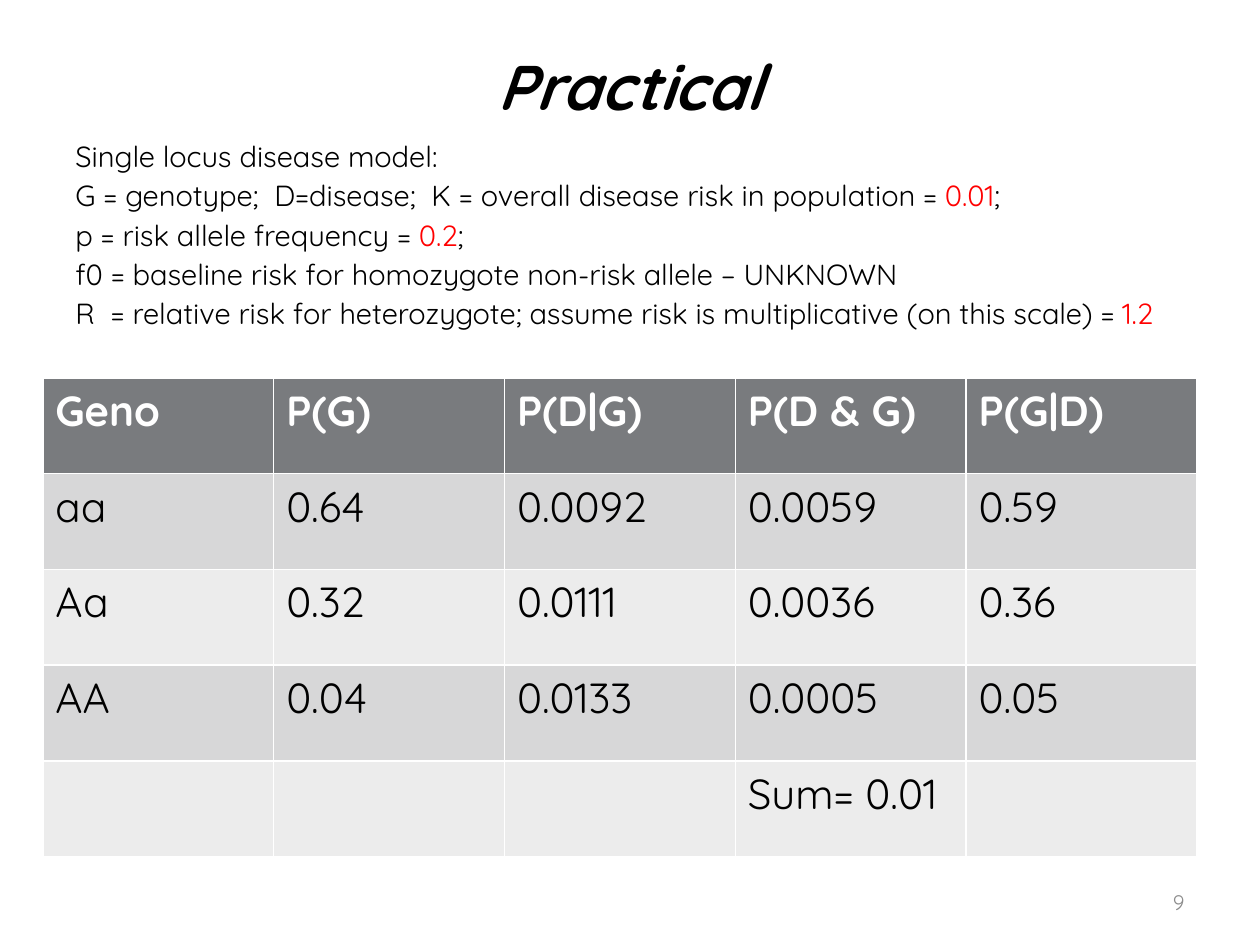
from dataclasses import dataclass
from pptx import Presentation, util as u
from pptx.dml.color import RGBColor
from pptx.enum import text

TITLE = "Practical"
PAGE_NUMBER = "9"
MODEL = [
    ["Single locus disease model:"],
    ["G = genotype;  D=disease;  K = overall disease risk in population = ", "0.01", ";"],
    ["p = risk allele frequency = ", "0.2", ";"],
    ["f0 = baseline risk for homozygote non-risk allele – UNKNOWN"],
    ["R  = relative risk for heterozygote; assume risk is multiplicative (on this scale) = ", "1.2"],
]
GENOTYPES = [
    ["Geno", "P(G)", "P(D|G)", "P(D & G)", "P(G|D)"],
    ["aa", "0.64", "0.0092", "0.0059", "0.59"],
    ["Aa", "0.32", "0.0111", "0.0036", "0.36"],
    ["AA", "0.04", "0.0133", "0.0005", "0.05"],
    ["", "", "", "Sum= 0.01", ""],
]


@dataclass(frozen=True)
class Theme:
    font: str = "Quicksand"
    ink: str = "000000"
    value: str = "FF0000"
    muted: str = "8C8C8C"
    header_ink: str = "FFFFFF"
    header_fill: str = "797B7E"
    bands: tuple = ("D7D7D8", "ECECEC")
    title_size: float = 36
    model_size: float = 16.6
    table_size: float = 24
    number_size: float = 12
    model_gap: float = 2.5


theme = Theme()
WIDTH, HEIGHT = u.Inches(10), u.Inches(7.5)
MARGIN = 0.05


def style(part, size, color, bold=False, italic=False):
    font = part.font
    font.name, font.size = theme.font, u.Pt(size)
    font.bold, font.italic = bold, italic
    font.color.rgb = RGBColor.from_string(color)


def add_text(slide, left, top, width, height, anchor):
    frame = slide.shapes.add_textbox(
        int(left * WIDTH), int(top * HEIGHT), int(width * WIDTH), int(height * HEIGHT)
    ).text_frame
    frame.word_wrap = True
    frame.vertical_anchor = anchor
    return frame


def add_line(slide, words, box, align, size, color, **emphasis):
    line = add_text(slide, *box, text.MSO_ANCHOR.MIDDLE).paragraphs[0]
    line.text, line.alignment = words, align
    style(line, size, color, **emphasis)


def add_model(slide):
    frame = add_text(slide, MARGIN, 0.14, 0.94, 0.26, text.MSO_ANCHOR.TOP)
    for index, pieces in enumerate(MODEL):
        statement = frame.add_paragraph() if index else frame.paragraphs[0]
        if index:
            statement.space_before = u.Pt(theme.model_gap)
        for position, piece in enumerate(pieces):
            run = statement.add_run()
            run.text = piece
            style(run, theme.model_size, theme.value if position % 2 else theme.ink)


def add_genotypes(slide):
    rows, columns = len(GENOTYPES), len(GENOTYPES[0])
    grid = slide.shapes.add_table(
        rows, columns, u.Inches(0.34), int(0.4 * HEIGHT), u.Inches(9.16), u.Inches(3.8)
    ).table
    for row, values in enumerate(GENOTYPES):
        header = row == 0
        fill = theme.header_fill if header else theme.bands[(row - 1) % 2]
        ink = theme.header_ink if header else theme.ink
        for column, value in enumerate(values):
            cell = grid.cell(row, column)
            cell.fill.solid()
            cell.fill.fore_color.rgb = RGBColor.from_string(fill)
            cell.text = value
            style(cell.text_frame.paragraphs[0], theme.table_size, ink, bold=header)


def main():
    deck = Presentation()
    deck.slide_width, deck.slide_height = WIDTH, HEIGHT
    slide = deck.slides.add_slide(deck.slide_layouts[6])
    add_line(slide, TITLE, (MARGIN, 0.04, 1 - 2 * MARGIN, 0.1), text.PP_ALIGN.CENTER,
             theme.title_size, theme.ink, bold=True, italic=True)
    add_line(slide, PAGE_NUMBER, (0.72, 0.93, 0.23, 0.05), text.PP_ALIGN.RIGHT,
             theme.number_size, theme.muted)
    add_model(slide)
    add_genotypes(slide)
    deck.save("out.pptx")


if __name__ == "__main__":
    main()
